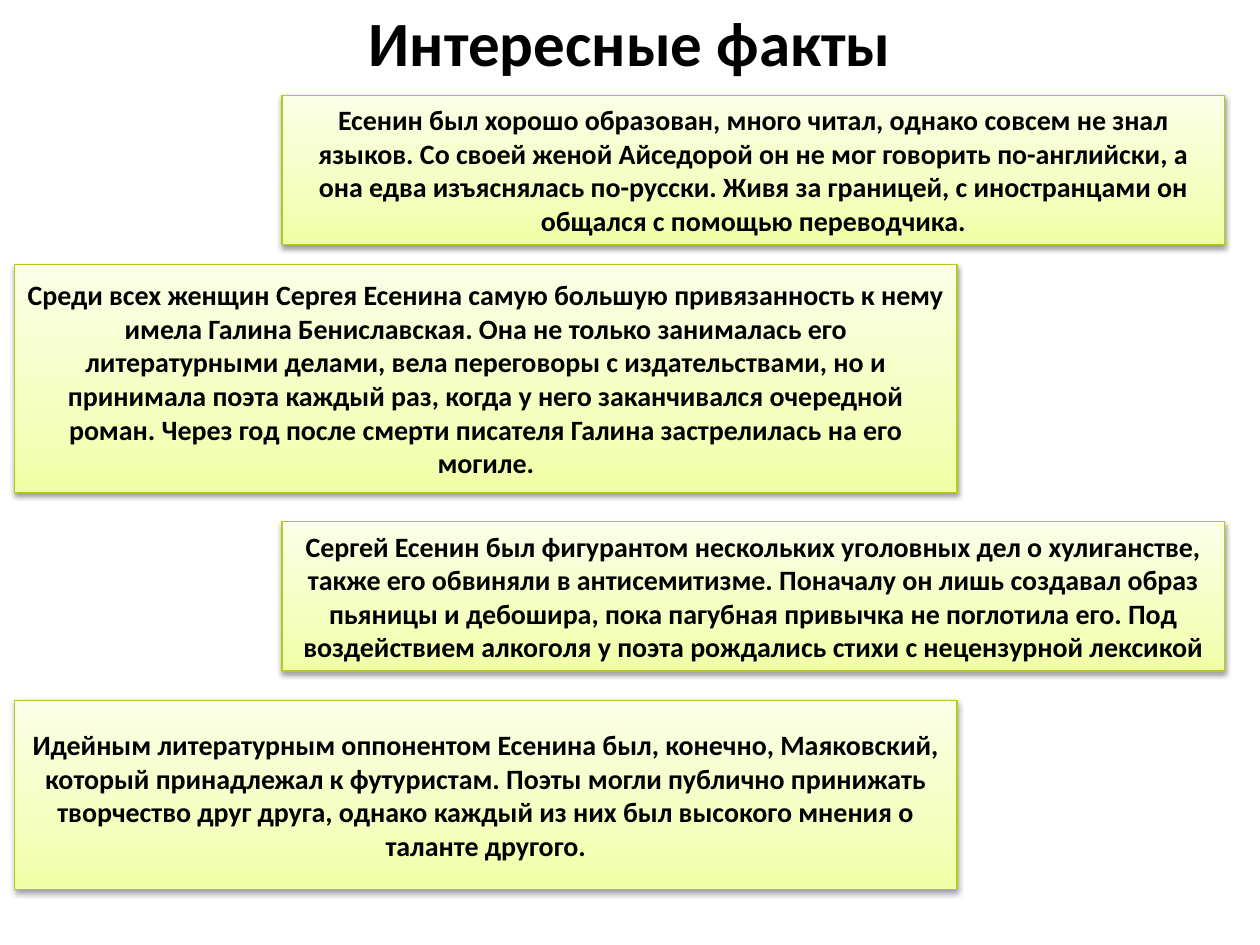
from lxml import etree
from pptx import Presentation
from pptx import util as u
from pptx.dml import color
from pptx.enum import shapes, text
from pptx.oxml import ns

HUES = {"ink": "000000", "edge": "B8CA15", "low": "F0FFA5",
        "mid": "F4FFBF", "high": "FBFFE7", "shade": "000000"}
STOPS = [("low", 0), ("mid", 35), ("high", 100)]
FRAME = {"word_wrap": True, "auto_size": text.MSO_AUTO_SIZE.NONE,
         "vertical_anchor": text.MSO_ANCHOR.MIDDLE}
FONT = {"name": "Calibri", "bold": True}
WIDE = 538.6
LEFT, RIGHT = 8.3, 161.2
FACTS = [
    (RIGHT, 54.5, 85.2,
     "Есенин был хорошо образован, много читал, однако совсем не знал языков. "
     "Со своей женой Айседорой он не мог говорить по-английски, а она едва "
     "изъяснялась по-русски. Живя за границей, с иностранцами он общался с "
     "помощью переводчика."),
    (LEFT, 151.2, 130.2,
     "Среди всех женщин Сергея Есенина самую большую привязанность к нему имела "
     "Галина Бениславская. Она не только занималась его литературными делами, "
     "вела переговоры с издательствами, но и принимала поэта каждый раз, когда "
     "у него заканчивался очередной роман. Через год после смерти писателя "
     "Галина застрелилась на его могиле."),
    (RIGHT, 298.2, 85.2,
     "Сергей Есенин был фигурантом нескольких уголовных дел о хулиганстве, "
     "также его обвиняли в антисемитизме. Поначалу он лишь создавал образ "
     "пьяницы и дебошира, пока пагубная привычка не поглотила его. Под "
     "воздействием алкоголя у поэта рождались стихи с нецензурной лексикой"),
    (LEFT, 400.2, 108,
     "Идейным литературным оппонентом Есенина был, конечно, Маяковский, который "
     "принадлежал к футуристам. Поэты могли публично принижать творчество друг "
     "друга, однако каждый из них был высокого мнения о таланте другого."),
]


def apply(item, vals):
    for key, val in vals.items():
        setattr(item, key, val)


def node(top, tag, **vals):
    return etree.SubElement(top, ns.qn(tag), vals)


def write(shape, words, size):
    frame = shape.text_frame
    apply(frame, FRAME)
    frame.text = words
    para = frame.paragraphs[0]
    para.alignment = text.PP_ALIGN.CENTER
    font = para.runs[0].font
    apply(font, FONT | {"size": u.Pt(size)})
    font.color.rgb = color.RGBColor.from_string(HUES["ink"])


def shade(shape):
    shape.fill.gradient()
    shape.fill.gradient_angle = 90
    props = shape._element.spPr
    stops = props.find(".//" + ns.qn("a:gsLst"))
    for old in list(stops):
        stops.remove(old)
    for name, spot in STOPS:
        stop = node(stops, "a:gs", pos=str(spot * 1000))
        node(stop, "a:srgbClr", val=HUES[name])
    shape.shadow.inherit = False
    cast = node(props.find(ns.qn("a:effectLst")), "a:outerShdw",
                blurRad=str(u.Pt(3.15)), dist=str(u.Pt(1.57)),
                dir="5400000", rotWithShape="0")
    tint = node(cast, "a:srgbClr", val=HUES["shade"])
    node(tint, "a:alpha", val="38000")


def place_title(slide, box):
    title = slide.shapes.title
    apply(title, dict(zip(("left", "top", "width", "height"), map(u.Pt, box))))
    write(title, "Интересные факты", 36)


def place_fact(slide, box, words):
    card = slide.shapes.add_shape(shapes.MSO_SHAPE.RECTANGLE, *map(u.Pt, box))
    card.line.color.rgb = color.RGBColor.from_string(HUES["edge"])
    card.line.width = u.Pt(0.75)
    shade(card)
    write(card, words, 16)


def main():
    deck = Presentation()
    apply(deck, {"slide_width": u.Pt(720), "slide_height": u.Pt(540)})
    slide = deck.slides.add_slide(deck.slide_layouts[5])
    place_title(slide, (36.7, 3.6, 646.6, 39.6))
    for left, top, high, words in FACTS:
        place_fact(slide, (left, top, WIDE, high), words)
    deck.save("out.pptx")


if __name__ == "__main__":
    main()
